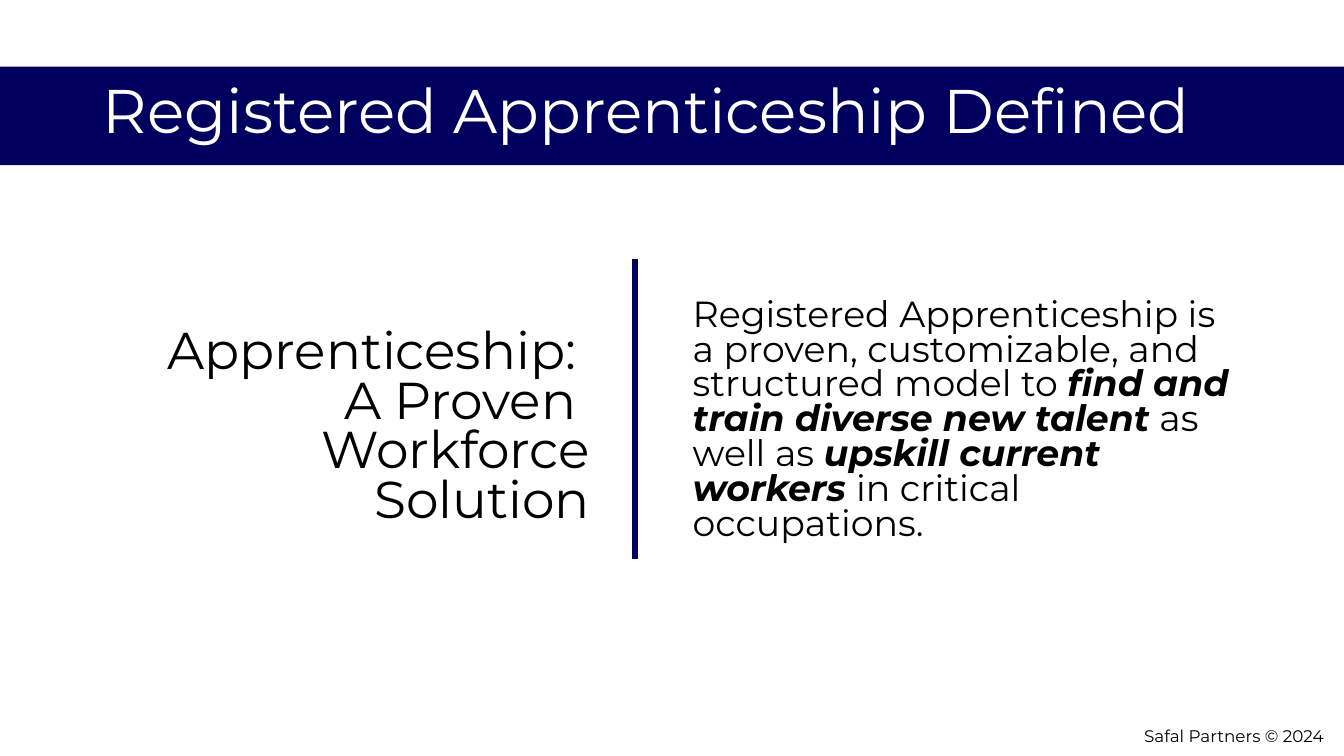
from pptx import Presentation
from pptx.dml.color import RGBColor
from pptx.enum.shapes import MSO_CONNECTOR, MSO_SHAPE
from pptx.enum.text import MSO_ANCHOR, MSO_AUTO_SIZE, PP_ALIGN
from pptx.oxml.ns import qn
from pptx.util import Inches, Pt

LEFT, RIGHT = PP_ALIGN.LEFT, PP_ALIGN.RIGHT
TOP, MIDDLE = MSO_ANCHOR.TOP, MSO_ANCHOR.MIDDLE
NAVY, WHITE, BLACK = "00015E", "FFFFFF", "000000"
WIDE, HIGH = 13.33, 7.5


def color(code):
    return RGBColor.from_string(code)


def write(shape, box, runs, size, ink, align, anchor, space):
    """Place a text shape and fill it with (text, strong) runs."""
    for side, value in zip(("left", "top", "width", "height"), box):
        setattr(shape, side, Inches(value))
    frame = shape.text_frame
    look = {"word_wrap": True, "auto_size": MSO_AUTO_SIZE.NONE,
            "vertical_anchor": anchor}
    for name, value in look.items():
        setattr(frame, name, value)
    para = frame.paragraphs[0]
    props = para._p.get_or_add_pPr()
    props.set("marL", "0")
    props.set("indent", "0")
    props.append(props.makeelement(qn("a:buNone"), {}))
    for name, value in {"alignment": align, "line_spacing": space,
                        "space_before": Pt(0)}.items():
        setattr(para, name, value)
    for text, strong in runs:
        for row, part in enumerate(text.split("\n")):
            if row:
                para.add_line_break()
            run = para.add_run()
            run.text = part
            font = {"name": "Montserrat", "size": Pt(size),
                    "bold": strong, "italic": strong}
            for name, value in font.items():
                setattr(run.font, name, value)
            run.font.color.rgb = color(ink)


deck = Presentation()
deck.slide_width, deck.slide_height = Inches(WIDE), Inches(HIGH)
slide = deck.slides.add_slide(deck.slide_layouts[3])
shapes = slide.shapes
title, claim, detail = slide.placeholders

# Title on a full-width band
band = shapes.add_shape(MSO_SHAPE.RECTANGLE, 0, Inches(0.66),
                        Inches(WIDE), Inches(0.98))
band.shadow.inherit = False
band.fill.solid()
band.fill.fore_color.rgb = color(NAVY)
band.line.fill.background()
title._element.addprevious(band._element)
write(title, (0.92, 0.4, 11.5, 1.45),
      [("Registered Apprenticeship Defined", False)],
      44, WHITE, LEFT, MIDDLE, 0.9)

# Claim and detail on either side of the divider
write(claim, (0.92, 3.22, 5.03, 2.02),
      [("Apprenticeship: \nA Proven \nWorkforce Solution", False)],
      37, BLACK, RIGHT, TOP, 0.8)
write(detail, (6.77, 2.92, 5.67, 4.19),
      [("Registered Apprenticeship is a proven, customizable, "
        "and structured model to ", False),
       ("find and train diverse new talent", True),
       (" as well as ", False),
       ("upskill current workers ", True),
       ("in critical occupations.", False)],
      25.9, BLACK, LEFT, TOP, 0.8)

rule = shapes.add_connector(MSO_CONNECTOR.STRAIGHT, Inches(6.3), Inches(2.57),
                            Inches(6.3), Inches(5.55))
rule.line.color.rgb = color(NAVY)
rule.line.width = Pt(4.5)
props = rule._element.spPr
props.append(props.makeelement(qn("a:effectLst"), {}))

credit = shapes.add_textbox(0, 0, 0, 0)
write(credit, (9.6, 7.1, 3.63, 0.4), [("Safal Partners © 2024", False)],
      12, BLACK, RIGHT, MIDDLE, 1.0)

deck.save("out.pptx")
